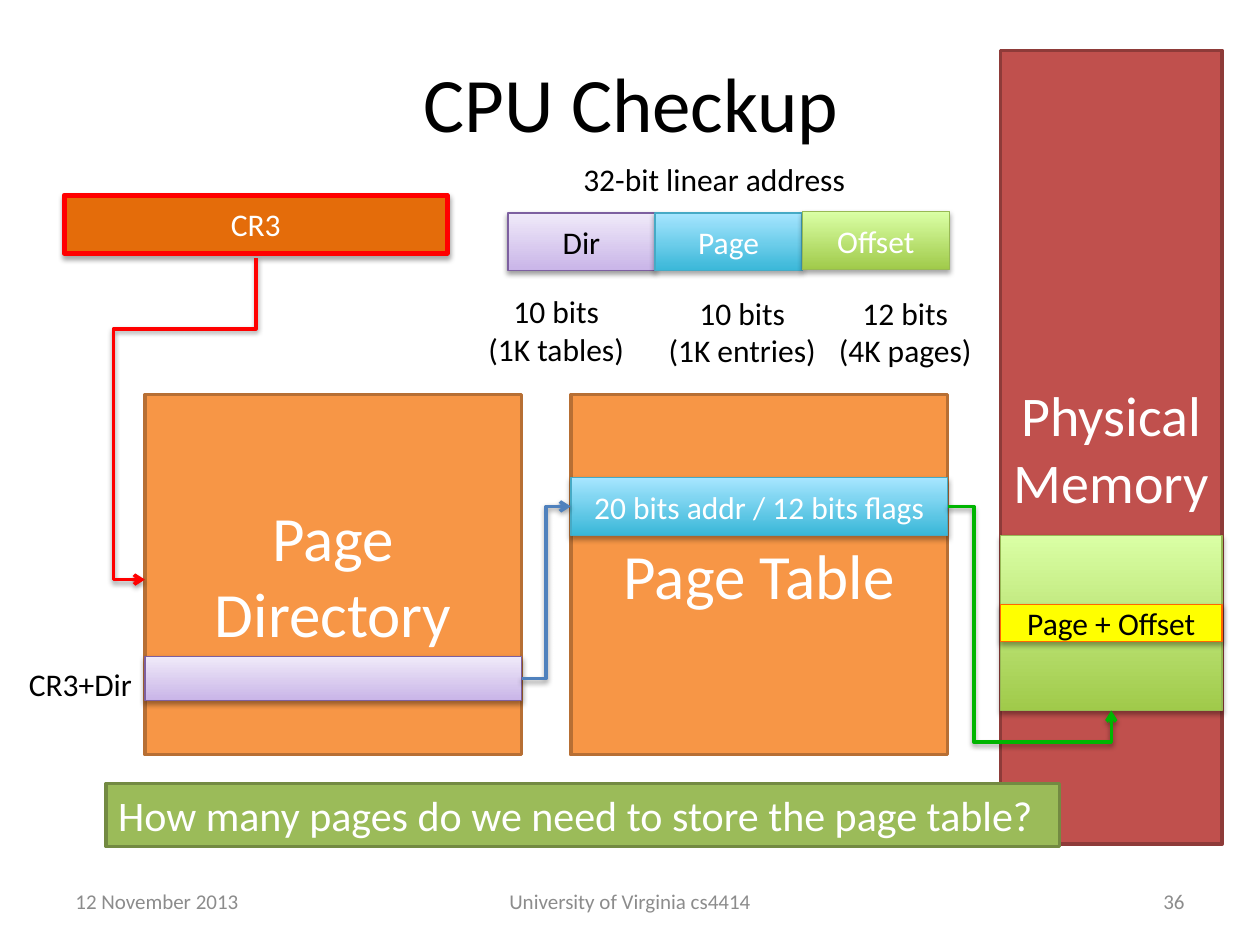
from dataclasses import dataclass
from typing import Optional

from lxml import etree
from pptx import Presentation
from pptx.dml.color import RGBColor
from pptx.enum.shapes import MSO_CONNECTOR, MSO_SHAPE
from pptx.enum.text import MSO_ANCHOR, MSO_AUTO_SIZE, PP_ALIGN
from pptx.oxml.ns import qn
from pptx.util import Pt

RECTANGLE = MSO_SHAPE.RECTANGLE
ELBOW = MSO_CONNECTOR.ELBOW
LEFT, CENTER, RIGHT = PP_ALIGN.LEFT, PP_ALIGN.CENTER, PP_ALIGN.RIGHT
TOP, MIDDLE = MSO_ANCHOR.TOP, MSO_ANCHOR.MIDDLE
FIT_SHAPE = MSO_AUTO_SIZE.SHAPE_TO_FIT_TEXT
SIDE_TOP, SIDE_LEFT, SIDE_BOTTOM, SIDE_RIGHT = range(4)


@dataclass(frozen=True)
class Shadow:
    opacity: int
    distance: float
    blur: float = 3.1


SOFT = Shadow(35, 1.8)
FIRM = Shadow(38, 1.6)


@dataclass(frozen=True)
class Paint:
    fill: str
    line: str
    width: float = 2
    fill_top: Optional[str] = None
    shadow: Optional[Shadow] = None


@dataclass(frozen=True)
class Theme:
    font: str = "Calibri"
    black: str = "000000"
    white: str = "FFFFFF"
    gray: str = "8C8C8C"
    red: str = "FF0000"
    blue: str = "4F81BD"
    green: str = "00B501"
    title: int = 44
    structure: int = 36
    memory: int = 32
    question: int = 24
    body: int = 18
    footer: int = 12
    register: Paint = Paint("E46C0A", "FF0000", 3, shadow=SOFT)
    table: Paint = Paint("F79646", "B76F34")
    physical: Paint = Paint("C0504D", "8E3B39")
    directory: Paint = Paint("C9B5E8", "7D60A0", 0.75, "F0EAF9", FIRM)
    page: Paint = Paint("39B7D8", "46AAC5", 0.75, "A7E6FF", SOFT)
    offset: Paint = Paint("A0CA4A", "98B955", 0.75, "DAFFA5", SOFT)
    byte: Paint = Paint("FFFF00", "FF6600", 0.75, shadow=SOFT)
    banner: Paint = Paint("9BBB59", "738A42")


THEME = Theme()


@dataclass(frozen=True)
class Box:
    left: float
    top: float
    width: float
    height: float
    text: str = ""
    paint: Optional[Paint] = None
    size: int = THEME.body
    color: str = THEME.white
    align: PP_ALIGN = CENTER
    anchor: MSO_ANCHOR = MIDDLE
    wrap: bool = True


@dataclass(frozen=True)
class Route:
    color: str
    begin: tuple[float, float]
    end: tuple[float, float]
    adjustments: tuple[float, ...] = ()
    begin_side: Optional[tuple[str, int]] = None
    end_side: Optional[tuple[str, int]] = None
    turned: bool = False


def write_text(shape, box: Box) -> None:
    frame = shape.text_frame
    frame.text = box.text
    frame.word_wrap = box.wrap
    frame.vertical_anchor = box.anchor
    if not box.wrap:
        frame.auto_size = FIT_SHAPE
    for paragraph in frame.paragraphs:
        paragraph.alignment = box.align
        for run in paragraph.runs:
            run.font.name = THEME.font
            run.font.size = Pt(box.size)
            run.font.color.rgb = RGBColor.from_string(box.color)


def add_shadow(properties, shadow: Optional[Shadow]) -> None:
    effects = etree.SubElement(properties, qn("a:effectLst"))
    if shadow:
        outer = etree.SubElement(effects, qn("a:outerShdw"), blurRad=str(Pt(shadow.blur)),
                                 dist=str(Pt(shadow.distance)), dir="5400000", rotWithShape="0")
        color = etree.SubElement(outer, qn("a:srgbClr"), val=THEME.black)
        etree.SubElement(color, qn("a:alpha"), val=str(shadow.opacity * 1000))


def draw_box(slide, box: Box):
    bounds = [Pt(length) for length in (box.left, box.top, box.width, box.height)]
    paint = box.paint
    if paint is None:
        shape = slide.shapes.add_textbox(*bounds)
    else:
        shape = slide.shapes.add_shape(RECTANGLE, *bounds)
        if paint.fill_top:
            shape.fill.gradient()
            shape.fill.gradient_angle = 90
            for stop, color in zip(shape.fill.gradient_stops, (paint.fill, paint.fill_top)):
                stop.color.rgb = RGBColor.from_string(color)
        else:
            shape.fill.solid()
            shape.fill.fore_color.rgb = RGBColor.from_string(paint.fill)
        shape.line.color.rgb = RGBColor.from_string(paint.line)
        shape.line.width = Pt(paint.width)
        add_shadow(shape._element.spPr, paint.shadow)
    write_text(shape, box)
    return shape


def draw_route(slide, route: Route, shapes: dict) -> None:
    (x1, y1), (x2, y2) = route.begin, route.end
    connector = slide.shapes.add_connector(ELBOW, Pt(x1), Pt(y1), Pt(x2), Pt(y2))
    if route.begin_side:
        connector.begin_connect(shapes[route.begin_side[0]], route.begin_side[1])
    if route.end_side:
        connector.end_connect(shapes[route.end_side[0]], route.end_side[1])
    connector.line.color.rgb = RGBColor.from_string(route.color)
    connector.line.width = Pt(2)
    properties = connector._element.spPr
    etree.SubElement(properties.find(qn("a:ln")), qn("a:tailEnd"), type="arrow")
    add_shadow(properties, FIRM)

    # A quarter turn makes the route leave downwards
    if route.turned:
        length, breadth = abs(y2 - y1), abs(x2 - x1)
        connector.left, connector.top = Pt((x1 + x2 - length) / 2), Pt((y1 + y2 - breadth) / 2)
        connector.width, connector.height = Pt(length), Pt(breadth)
        transform = properties.find(qn("a:xfrm"))
        transform.set("rot", "5400000")
        transform.set("flipH", "0")

    # Two adjustments mean a route with three bends
    if route.adjustments:
        geometry = properties.find(qn("a:prstGeom"))
        geometry.set("prst", "bentConnector4")
        guides = geometry.find(qn("a:avLst"))
        for number, value in enumerate(route.adjustments, 1):
            etree.SubElement(guides, qn("a:gd"), name=f"adj{number}", fmla=f"val {round(value * 100000)}")


def label(left: float, top: float, width: float, height: float, text: str, align=CENTER) -> Box:
    return Box(left, top, width, height, text, color=THEME.black, align=align, anchor=TOP, wrap=False)


def footer(left: float, width: float, text: str, align: PP_ALIGN) -> Box:
    return Box(left, 500.4, width, 28.8, text, None, THEME.footer, THEME.gray, align)


DIRECTORY_X, TABLE_X, TABLE_WIDTH = 82.8, 326.2, 215.3
MEMORY_X, MEMORY_WIDTH = 571.7, 126.7
FIELD_X, FIELD_WIDTH, FIELD_HEIGHT = 290.2, 84.1, 33.1

BOXES = {
    # Register, tables and memory
    "register": Box(36.7, 111.6, 218.9, FIELD_HEIGHT, "CR3", THEME.register),
    "directory": Box(DIRECTORY_X, 225.4, TABLE_WIDTH, 205.9, "Page Directory", THEME.table, THEME.structure),
    "table": Box(TABLE_X, 225.4, TABLE_WIDTH, 205.9, "Page Table", THEME.table, THEME.structure),
    "memory": Box(MEMORY_X, 28.8, MEMORY_WIDTH, 453.6, "Physical Memory", THEME.physical, THEME.memory),
    # Fields of the linear address
    "dir": Box(FIELD_X, 121.7, FIELD_WIDTH, FIELD_HEIGHT, "Dir", THEME.directory, color=THEME.black),
    "page": Box(FIELD_X + FIELD_WIDTH, 121.7, FIELD_WIDTH, FIELD_HEIGHT, "Page", THEME.page),
    "offset": Box(FIELD_X + 2 * FIELD_WIDTH, 121, FIELD_WIDTH, FIELD_HEIGHT, "Offset", THEME.offset),
    # Entries found by the lookup
    "directory entry": Box(DIRECTORY_X, 375.1, TABLE_WIDTH, 25.2, paint=THEME.directory),
    "table entry": Box(TABLE_X, 272.9, TABLE_WIDTH, FIELD_HEIGHT, "20 bits addr / 12 bits flags", THEME.page),
    "frame": Box(MEMORY_X, 306, MEMORY_WIDTH, 100, paint=THEME.offset),
    "byte": Box(MEMORY_X, 345.6, MEMORY_WIDTH, 20.9, "Page + Offset", THEME.byte, color=THEME.black),
}

ROUTES = [
    Route(THEME.red, (146.2, 147.6), (82.8, 331.2), (0.22, 1.285),
          end_side=("directory", SIDE_LEFT), turned=True),
    Route(THEME.blue, (298.1, 387.7), (326.2, 289.4),
          begin_side=("directory entry", SIDE_RIGHT), end_side=("table entry", SIDE_LEFT)),
    Route(THEME.green, (541.5, 289.4), (635, 406), (0.16, 1.155),
          begin_side=("table entry", SIDE_RIGHT), end_side=("frame", SIDE_BOTTOM)),
]

TEXTS = [
    label(9.4, 376.6, 74.2, 28.8, "CR3+Dir", LEFT),
    label(326.2, 87.8, 166.3, 28.8, "32-bit linear address", LEFT),
    label(271.4, 163.4, 92.9, 51.1, "10 bits\n(1K tables)"),
    label(374.4, 164.2, 99.4, 51.1, "10 bits\n(1K entries)"),
    label(471.6, 164.2, 91.4, 51.1, "12 bits\n(4K pages)"),
    Box(60.5, 447.8, 545, 36, "How many pages do we need to store the page table?",
        THEME.banner, THEME.question, align=LEFT, anchor=TOP, wrap=False),
    footer(36, 168, "12 November 2013", LEFT),
    footer(246, 228, "University of Virginia cs4414", CENTER),
    footer(516, 168, "36", RIGHT),
]


def main() -> None:
    presentation = Presentation()
    presentation.slide_width, presentation.slide_height = Pt(720), Pt(540)
    slide = presentation.slides.add_slide(presentation.slide_layouts[5])

    title = slide.shapes.title
    title.left, title.top, title.width, title.height = Pt(36.7), Pt(13), Pt(648), Pt(90)
    write_text(title, Box(36.7, 13, 648, 90, "CPU Checkup", size=THEME.title, color=THEME.black))

    shapes = {name: draw_box(slide, box) for name, box in BOXES.items()}
    for route in ROUTES:
        draw_route(slide, route, shapes)
    for text in TEXTS:
        draw_box(slide, text)
    presentation.save("out.pptx")


if __name__ == "__main__":
    main()
